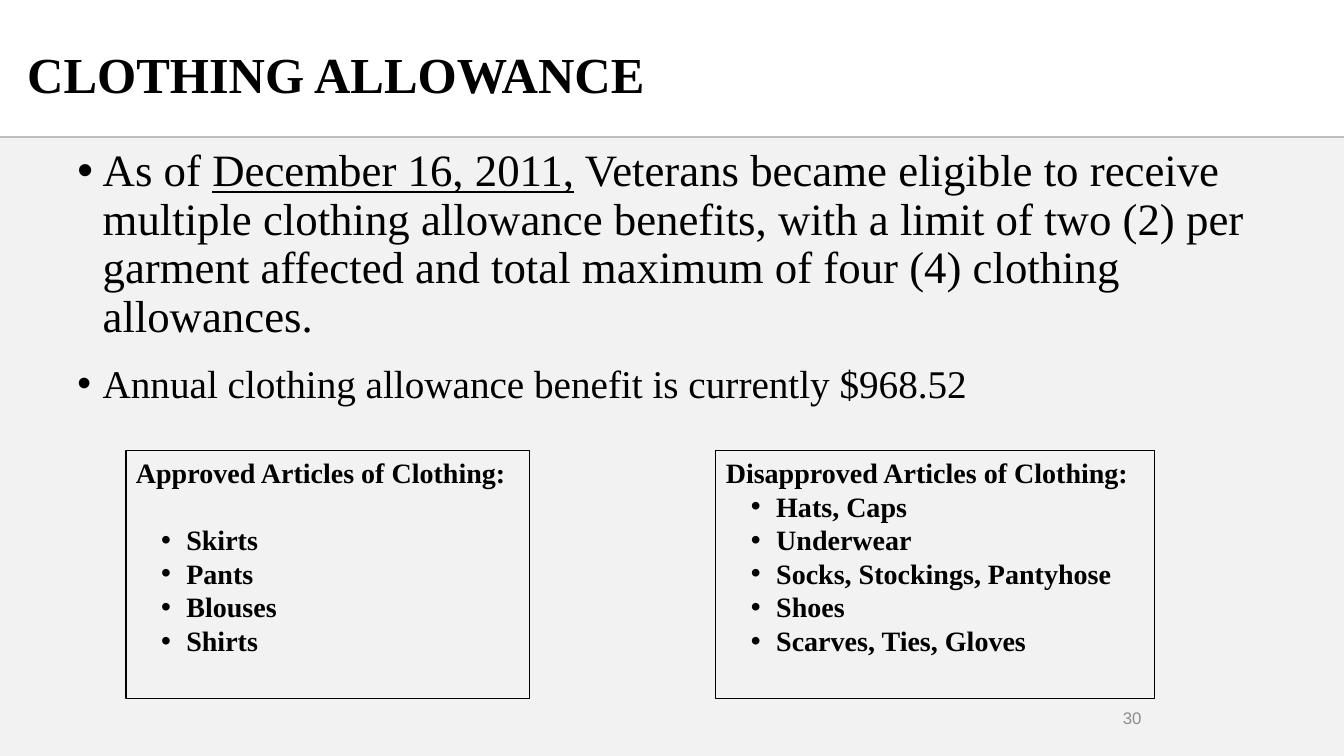
"""Build the clothing allowance slide."""
from lxml import etree
from pptx import Presentation
from pptx.dml.color import RGBColor
from pptx.enum.shapes import MSO_CONNECTOR, MSO_SHAPE
from pptx.enum.text import MSO_ANCHOR, PP_ALIGN
from pptx.oxml.ns import qn
from pptx.util import Inches, Pt

RECTANGLE = MSO_SHAPE.RECTANGLE
STRAIGHT = MSO_CONNECTOR.STRAIGHT
MIDDLE, TOP = MSO_ANCHOR.MIDDLE, MSO_ANCHOR.TOP
LEFT, RIGHT = PP_ALIGN.LEFT, PP_ALIGN.RIGHT
SERIF, SANS = "Times New Roman", "Arial"
WIDTH, HEIGHT = 13.33, 7.5
HEADER = 1.37
LIST_TOP, LIST_HEIGHT = 4.47, 2.46


def color(value):
    return RGBColor.from_string(value)


def write(frame, text, size=20, font=SERIF, ink="000000", bold=False, underline=False,
          align=LEFT, bullet_at=None, same_paragraph=False):
    """Add a run, in a new paragraph unless the frame is empty or it continues one."""
    paragraph = frame.paragraphs[-1]
    if paragraph.runs and not same_paragraph:
        paragraph = frame.add_paragraph()
    paragraph.alignment = align
    if bullet_at is not None:
        properties = paragraph._p.get_or_add_pPr()
        properties.set("marL", str(Inches(bullet_at + 0.25)))
        properties.set("indent", str(Inches(-0.25)))
        etree.SubElement(properties, qn("a:buFont")).set("typeface", SANS)
        etree.SubElement(properties, qn("a:buChar")).set("char", "•")
    run = paragraph.add_run()
    run.text = text
    run.font.size, run.font.name = Pt(size), font
    run.font.bold, run.font.underline = bold, underline
    run.font.color.rgb = color(ink)
    return paragraph


deck = Presentation()
deck.slide_width, deck.slide_height = Inches(WIDTH), Inches(HEIGHT)
slide = deck.slides.add_slide(deck.slide_layouts[5])
shapes = slide.shapes

backdrop = shapes.add_shape(RECTANGLE, 0, Inches(HEADER), Inches(WIDTH), Inches(HEIGHT - HEADER))
backdrop.shadow.inherit = False
backdrop.fill.solid()
backdrop.fill.fore_color.rgb = color("F2F2F2")
backdrop.line.fill.background()

divider = shapes.add_connector(STRAIGHT, 0, Inches(1.36), Inches(WIDTH), Inches(1.36))
divider.line.color.rgb = color("BFBFBF")
divider.line.width = Pt(1.5)
etree.SubElement(divider._element.spPr, qn("a:effectLst"))

heading = shapes.title
heading.left, heading.top = Inches(0.17), Inches(0.33)
heading.width, heading.height = Inches(8.97), Inches(0.8)
heading.text_frame.vertical_anchor = MIDDLE
write(heading.text_frame, "CLOTHING ALLOWANCE", size=36, bold=True)

rules = shapes.add_textbox(Inches(0.67), Inches(1.42), Inches(12), Inches(3.22)).text_frame
rules.word_wrap = True
eligibility = write(rules, "As of ", size=32, bullet_at=0)
write(rules, "December 16, 2011,", size=32, underline=True, same_paragraph=True)
write(rules, " Veterans became eligible to receive multiple clothing allowance benefits, "
      "with a limit of two (2) per garment affected and total maximum of four (4) "
      "clothing allowances.", size=32, same_paragraph=True)
benefit = write(rules, "Annual clothing allowance benefit is currently $968.52",
                size=28, bullet_at=0)
for rule in (eligibility, benefit):
    rule.line_spacing = 0.9
    rule.space_after = Pt(6)
benefit.space_before = Pt(10)

article_lists = [
    (1.25, 4, "Approved Articles of Clothing:", 24,
     ["Skirts", "Pants", "Blouses", "Shirts"]),
    (7.1, 4.35, "Disapproved Articles of Clothing:", 0,
     ["Hats, Caps", "Underwear", "Socks, Stockings, Pantyhose", "Shoes",
      "Scarves, Ties, Gloves"]),
]
for left, width, caption, gap, articles in article_lists:
    panel = shapes.add_shape(RECTANGLE, Inches(left), Inches(LIST_TOP),
                             Inches(width), Inches(LIST_HEIGHT))
    panel.shadow.inherit = False
    panel.fill.background()
    panel.line.color.rgb = color("000000")
    panel.line.width = Pt(0.75)
    panel.text_frame.word_wrap = True
    panel.text_frame.vertical_anchor = TOP
    write(panel.text_frame, caption, bold=True).space_after = Pt(gap)
    for article in articles:
        write(panel.text_frame, article, bold=True, bullet_at=0.25)

page_number = shapes.add_textbox(Inches(9.17), Inches(6.92), Inches(2.25), Inches(0.4)).text_frame
page_number.word_wrap = True
page_number.vertical_anchor = MIDDLE
write(page_number, "30", size=12, font=SANS, ink="8C8C8C", align=RIGHT)

deck.save("out.pptx")
